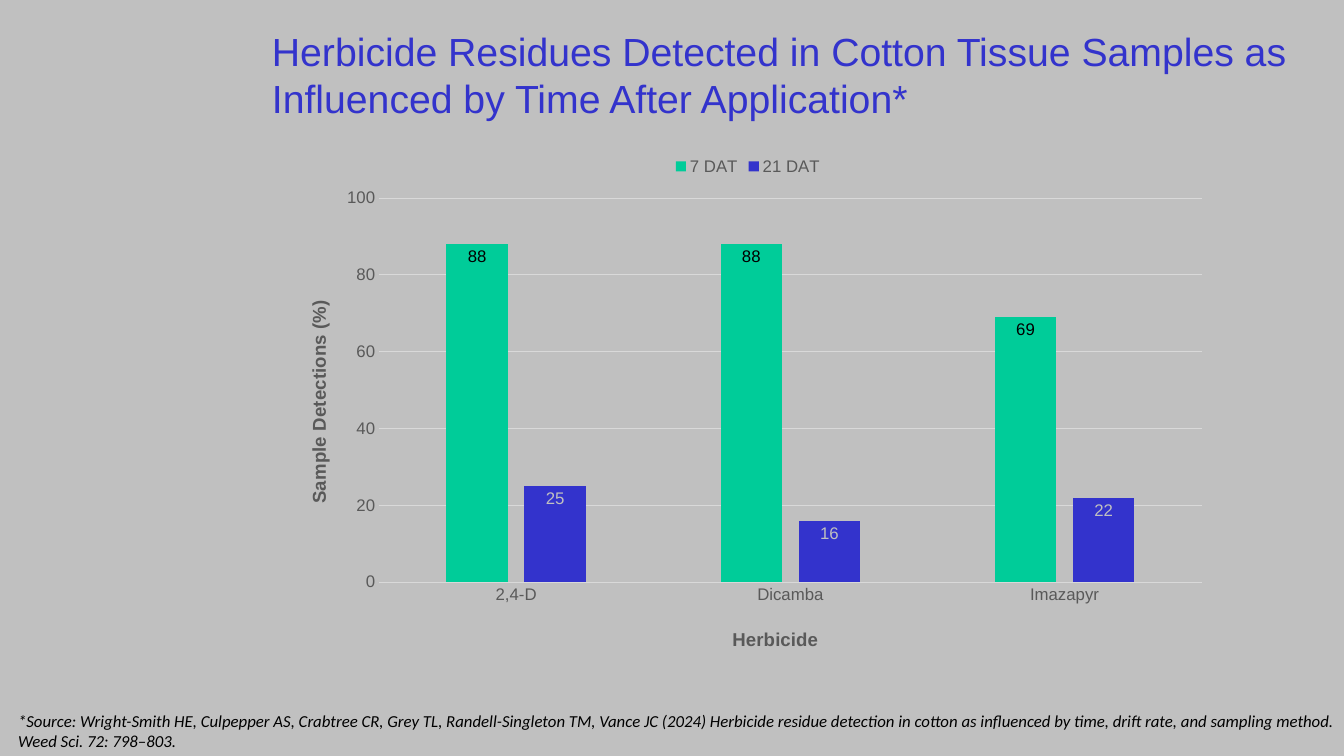
from lxml import etree
from pptx import Presentation
from pptx.chart.data import CategoryChartData
from pptx.dml.color import RGBColor
from pptx.enum.chart import XL_CHART_TYPE as ChartType
from pptx.enum.chart import XL_LABEL_POSITION as LabelPosition
from pptx.enum.chart import XL_LEGEND_POSITION as LegendPosition
from pptx.enum.chart import XL_TICK_MARK as TickMark
from pptx.enum.text import MSO_ANCHOR as Anchor
from pptx.oxml.ns import qn
from pptx.util import Pt

GREY, BLUE, GREEN, BLACK = "C0C0C0", "3333CC", "00CC99", "000000"
AXIS_TEXT, GRID = "595959", "D9D9D9"


def style_font(font, size, color, name="Arial"):
    font.size = Pt(size)
    font.name = name
    font.color.rgb = RGBColor.from_string(color)


def place(element, index, **fractions):
    for old_layout in element.findall(qn("c:layout")):
        element.remove(old_layout)
    layout = etree.Element(qn("c:layout"))
    manual = etree.SubElement(layout, qn("c:manualLayout"))
    if "w" in fractions:
        etree.SubElement(manual, qn("c:layoutTarget")).set("val", "inner")
    for mode in ("xMode", "yMode"):
        etree.SubElement(manual, qn(f"c:{mode}")).set("val", "edge")
    for key, fraction in fractions.items():
        etree.SubElement(manual, qn(f"c:{key}")).set("val", str(fraction))
    element.insert(index, layout)


presentation = Presentation()
presentation.slide_width, presentation.slide_height = Pt(960), Pt(540)
slide = presentation.slides.add_slide(presentation.slide_layouts[6])
slide.background.fill.solid()
slide.background.fill.fore_color.rgb = RGBColor.from_string(GREY)

title_box = slide.shapes.add_textbox(Pt(187.2), Pt(8), Pt(765.4), Pt(90))
title_box.text_frame.word_wrap = True
title_box.text_frame.vertical_anchor = Anchor.MIDDLE
paragraph = title_box.text_frame.paragraphs[0]
title_lines = ["Herbicide Residues Detected in Cotton Tissue Samples as ",
               "Influenced by Time After Application*"]
for number, line in enumerate(title_lines):
    if number:
        paragraph.add_line_break()
    run = paragraph.add_run()
    run.text = line
    style_font(run.font, 28, BLUE)

detections = [("7 DAT", [88, 88, 69], GREEN, BLACK), ("21 DAT", [25, 16, 22], BLUE, GREY)]
chart_data = CategoryChartData()
chart_data.categories = ["2,4-D", "Dicamba", "Imazapyr"]
for name, values, _, _ in detections:
    chart_data.add_series(name, values)
chart = slide.shapes.add_chart(ChartType.COLUMN_CLUSTERED, Pt(196.5), Pt(104.4),
                               Pt(675.4), Pt(370.8), chart_data).chart
style_font(chart.font, 12, BLACK)
chart.has_title = False
chart.has_legend = True
chart.legend.position = LegendPosition.TOP
chart.legend.include_in_layout = False
style_font(chart.legend.font, 12, AXIS_TEXT)

plot = chart.plots[0]
plot.gap_width, plot.overlap, plot.vary_by_categories = 219, -27, False
for series, (_, _, fill_color, label_color) in zip(plot.series, detections):
    series.format.fill.solid()
    series.format.fill.fore_color.rgb = RGBColor.from_string(fill_color)
    labels = series.data_labels
    labels.show_value = True
    labels.position = LabelPosition.INSIDE_END
    style_font(labels.font, 12, label_color)

category_axis, value_axis = chart.category_axis, chart.value_axis
for axis, text, x, y in [(category_axis, "Herbicide", 0.48, 0.92),
                         (value_axis, "Sample Detections (%)", 0.03, 0.29)]:
    axis.major_tick_mark = axis.minor_tick_mark = TickMark.NONE
    style_font(axis.tick_labels.font, 12, AXIS_TEXT)
    run = axis.axis_title.text_frame.paragraphs[0].add_run()
    run.text = text
    run.font.bold = True
    style_font(run.font, 13.3, AXIS_TEXT)
    place(axis.axis_title._element, 1, x=x, y=y)

value_axis.minimum_scale, value_axis.maximum_scale, value_axis.major_unit = 0, 100, 20
value_axis.has_major_gridlines = True
value_axis.format.line.fill.background()
for line in (category_axis.format.line, value_axis.major_gridlines.format.line):
    line.width = Pt(0.75)
    line.color.rgb = RGBColor.from_string(GRID)
place(chart._chartSpace.chart.plotArea, 0, x=0.11, y=0.1, w=0.87, h=0.74)

source_box = slide.shapes.add_textbox(Pt(5.8), Pt(504), Pt(957), Pt(36))
source_box.text_frame.word_wrap = True
run = source_box.text_frame.paragraphs[0].add_run()
run.text = ("*Source: Wright-Smith HE, Culpepper AS, Crabtree CR, Grey TL, Randell-Singleton TM, "
            "Vance JC (2024) Herbicide residue detection in cotton as influenced by time, "
            "drift rate, and sampling method. Weed Sci. 72: 798–803.")
run.font.italic = True
style_font(run.font, 12, BLACK, "Calibri")

presentation.save("out.pptx")
